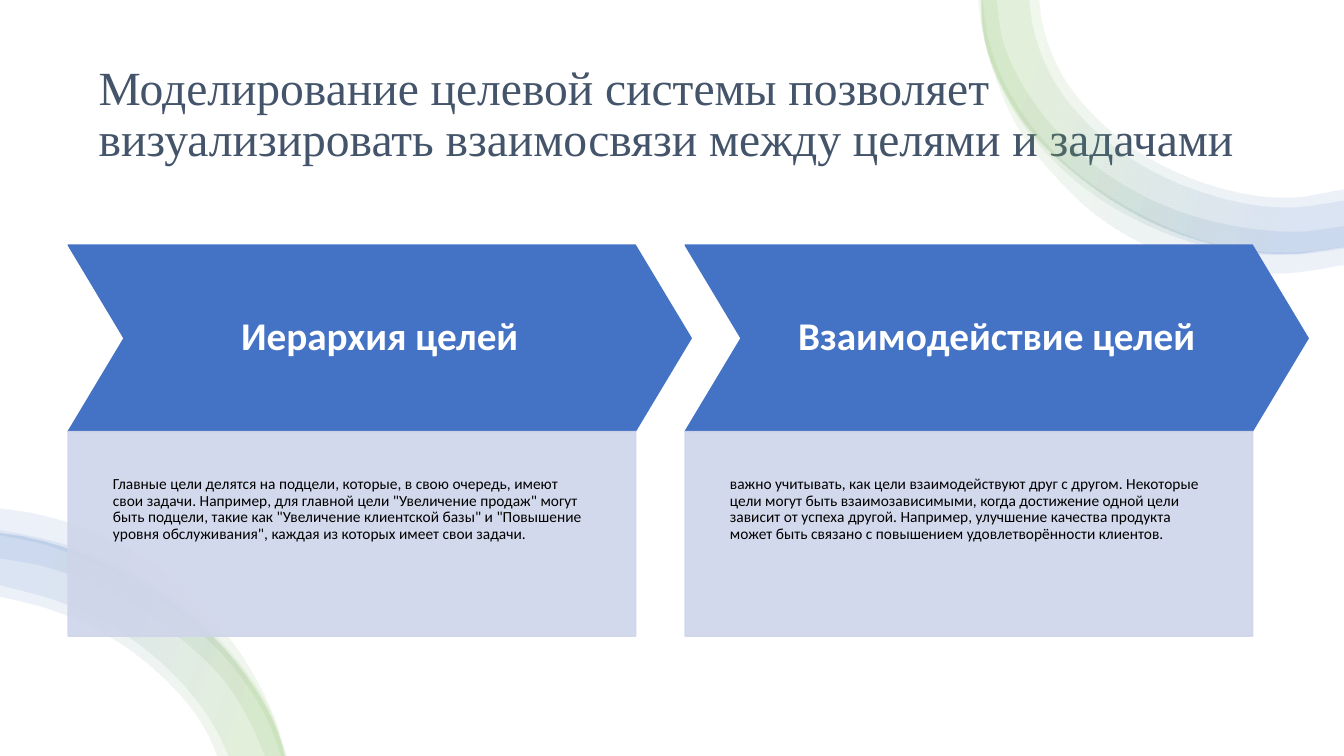
import math

import pptx
import pptx.dml.color
import pptx.enum.lang
import pptx.enum.shapes
import pptx.enum.text
import pptx.oxml
import pptx.oxml.ns
import pptx.util

Pt = pptx.util.Pt
RGBColor = pptx.dml.color.RGBColor
Shape = pptx.enum.shapes.MSO_SHAPE
Align = pptx.enum.text.PP_ALIGN
Anchor = pptx.enum.text.MSO_ANCHOR
qn = pptx.oxml.ns.qn
NAMESPACE = pptx.oxml.ns.nsdecls("a")

BLUE = RGBColor(0x44, 0x72, 0xC4)
GREEN = RGBColor(0x70, 0xAD, 0x47)
LAVENDER = RGBColor(0xCF, 0xD5, 0xEA)
SLATE = RGBColor(0x44, 0x54, 0x6A)
WHITE = RGBColor(0xFF, 0xFF, 0xFF)
BLACK = RGBColor(0, 0, 0)

TITLE = "Моделирование целевой системы позволяет визуализировать взаимосвязи между целями и задачами"
COLUMNS = [
    ("Иерархия целей",
     'Главные цели делятся на подцели, которые, в свою очередь, имеют свои задачи. '
     'Например, для главной цели "Увеличение продаж" могут быть подцели, такие как '
     '"Увеличение клиентской базы" и "Повышение уровня обслуживания", каждая из которых '
     'имеет свои задачи.'),
    ("Взаимодействие целей",
     'важно учитывать, как цели взаимодействуют друг с другом. Некоторые цели могут быть '
     'взаимозависимыми, когда достижение одной цели зависит от успеха другой. Например, '
     'улучшение качества продукта может быть связано с повышением удовлетворённости клиентов.'),
]

# Each band is an outer edge and an inner edge, given by points on its curves
TOP_ARC = [(701, -1), (701, 14), (726, 80), (778, 132), (845, 168), (921, 181), (960, 176)]
TOP_BANDS = [
    (TOP_ARC,
     [(960, 135), (921, 141), (855, 129), (796, 96), (756, 49), (743, 9), (742, -1)]),
    (TOP_ARC,
     [(960, 143), (921, 148), (852, 135), (792, 102), (750, 53), (736, 10), (735, -1)]),
    ([(701, -1), (704, 31), (716, 64), (759, 121), (820, 161), (892, 181), (930, 181), (960, 177)],
     [(960, 161), (928, 165), (894, 163), (828, 145), (771, 109), (729, 58), (716, 28), (712, -1)]),
    ([(699, -1), (700, 9), (714, 63), (730, 96), (753, 125), (781, 152), (814, 173), (890, 195),
      (930, 194), (960, 189)],
     [(960, 176), (929, 180), (892, 179), (857, 171), (823, 157), (791, 139), (762, 117),
      (738, 91), (718, 60), (706, 27), (702, -1)]),
]
BOTTOM_ARC = [(203, 540), (199, 526), (169, 474), (125, 432), (69, 400), (8, 382), (0, 381)]
BOTTOM_BANDS = [
    ([(205, 540), (195, 510), (176, 473), (151, 440), (120, 410), (83, 387), (21, 366), (0, 363)],
     [(0, 382), (36, 390), (73, 405), (109, 425), (140, 449), (168, 478), (190, 512), (201, 540)]),
    (BOTTOM_ARC,
     [(0, 426), (38, 436), (103, 472), (148, 524), (155, 540)]),
    ([(204, 540), (193, 508), (171, 474), (144, 445), (112, 420), (76, 400), (17, 382), (0, 379)],
     [(0, 399), (32, 405), (68, 418), (131, 458), (158, 484), (178, 515), (189, 540)]),
    (BOTTOM_ARC,
     [(0, 418), (40, 429), (108, 467), (154, 521), (163, 540)]),
]


def curve_handles(knots):
    """Two Bezier handles for each stretch of a smooth curve through the knots."""
    lengths = [math.dist(a, b) for a, b in zip(knots, knots[1:])]
    slopes = [[(q - p) / length for p, q in zip(a, b)]
              for a, b, length in zip(knots, knots[1:], lengths)]
    tangents = [slopes[0]]
    for index in range(1, len(slopes)):
        before, after = lengths[index - 1], lengths[index]
        tangents.append([(s * after + t * before) / (before + after)
                         for s, t in zip(slopes[index - 1], slopes[index])])
    tangents.append(slopes[-1])
    return [([p + s * length / 3 for p, s in zip(a, start)],
             [p - s * length / 3 for p, s in zip(b, end)])
            for a, b, start, end, length
            in zip(knots, knots[1:], tangents, tangents[1:], lengths)]


def round_edge(nodes):
    """Turn the straight steps between outline nodes into curves."""
    knots = [(int(node[0].get("x")), int(node[0].get("y"))) for node in nodes]
    for node, handles in zip(nodes[1:], curve_handles(knots)):
        curve = pptx.oxml.parse_xml(f'<a:cubicBezTo {NAMESPACE}>' + "".join(
            f'<a:pt x="{round(x)}" y="{round(y)}"/>' for x, y in handles) + '</a:cubicBezTo>')
        curve.append(node[0])
        node.getparent().replace(node, curve)


def write_text(shape, text, *, font, size, color, bold=False, align=Align.LEFT,
               anchor=Anchor.TOP, insets=(7.2, 3.6, 7.2, 3.6)):
    frame = shape.text_frame
    frame.word_wrap = True
    frame.vertical_anchor = anchor
    (frame.margin_left, frame.margin_top,
     frame.margin_right, frame.margin_bottom) = map(Pt, insets)
    para = frame.paragraphs[0]
    para.alignment = align
    para.line_spacing = 0.9
    span = para.add_run()
    span.text = text
    span.font.name = font
    span.font.size = Pt(size)
    span.font.bold = bold
    span.font.color.rgb = color
    span.font.language_id = pptx.enum.lang.MSO_LANGUAGE_ID.RUSSIAN


class Page:
    heading_font = "Times New Roman"
    body_font = "Calibri"

    def __init__(self, deck):
        self.shapes = deck.slides.add_slide(deck.slide_layouts[6]).shapes

    def title(self, text, left, top, width, height):
        box = self.shapes.add_textbox(Pt(left), Pt(top), Pt(width), Pt(height))
        write_text(box, text, font=self.heading_font, size=34, color=SLATE,
                   anchor=Anchor.MIDDLE)

    def band(self, outer, inner, angle):
        corners = [(Pt(x), Pt(y)) for x, y in outer + inner]
        builder = self.shapes.build_freeform(*corners[0])
        builder.add_line_segments(corners[1:], close=True)
        shape = builder.convert_to_shape()
        shape.shadow.inherit = False
        shape.line.fill.background()
        outline = shape.element.spPr.find(qn("a:custGeom"))
        nodes = [point.getparent() for point in outline.iter(qn("a:pt"))]
        round_edge(nodes[:len(outer)])
        round_edge(nodes[len(outer):len(corners)])
        # Transparent stops need XML
        stops = "".join(
            f'<a:gs pos="{place * 1000}"><a:srgbClr val="{color}">'
            '<a:alpha val="10000"/></a:srgbClr></a:gs>'
            for place, color in ((16, GREEN), (85, BLUE)))
        outline.addnext(pptx.oxml.parse_xml(
            f'<a:gradFill {NAMESPACE} rotWithShape="1"><a:gsLst>{stops}</a:gsLst>'
            f'<a:lin ang="{angle * 60000}" scaled="0"/></a:gradFill>'))

    def block(self, kind, left, top, width, height, color, opacity=100):
        shape = self.shapes.add_shape(kind, Pt(left), Pt(top), Pt(width), Pt(height))
        shape.shadow.inherit = False
        shape.fill.solid()
        shape.fill.fore_color.rgb = color
        shape.line.color.rgb = color
        shape.line.width = Pt(1)
        if opacity < 100:
            for tint in shape.element.spPr.iter(qn("a:srgbClr")):
                tint.append(pptx.oxml.parse_xml(
                    f'<a:alpha {NAMESPACE} val="{opacity * 1000}"/>'))
        return shape

    def column(self, heading, body, left):
        chevron = self.block(Shape.CHEVRON, left, 175, 445, 133.2, BLUE)
        chevron.adjustments[0] = 0.3
        write_text(chevron, heading, font=self.body_font, size=28, color=WHITE, bold=True,
                   align=Align.CENTER, anchor=Anchor.MIDDLE, insets=(16.5,) * 4)
        panel = self.block(Shape.RECTANGLE, left, 308.2, 405.4, 146.2, LAVENDER, opacity=90)
        write_text(panel, body, font=self.body_font, size=11, color=BLACK,
                   insets=(32, 32, 32, 64))


def main():
    deck = pptx.Presentation()
    deck.slide_width, deck.slide_height = Pt(960), Pt(540)
    page = Page(deck)

    page.title(TITLE, 63.4, 36, 833, 93.6)

    # Corner arcs
    for bands, angle in ((TOP_BANDS, 20), (BOTTOM_BANDS, 200)):
        for outer, inner in bands:
            page.band(outer, inner, angle)

    # Chevron columns
    for index, (heading, body) in enumerate(COLUMNS):
        page.column(heading, body, 48.7 + index * 440.7)

    deck.save("out.pptx")


if __name__ == "__main__":
    main()
